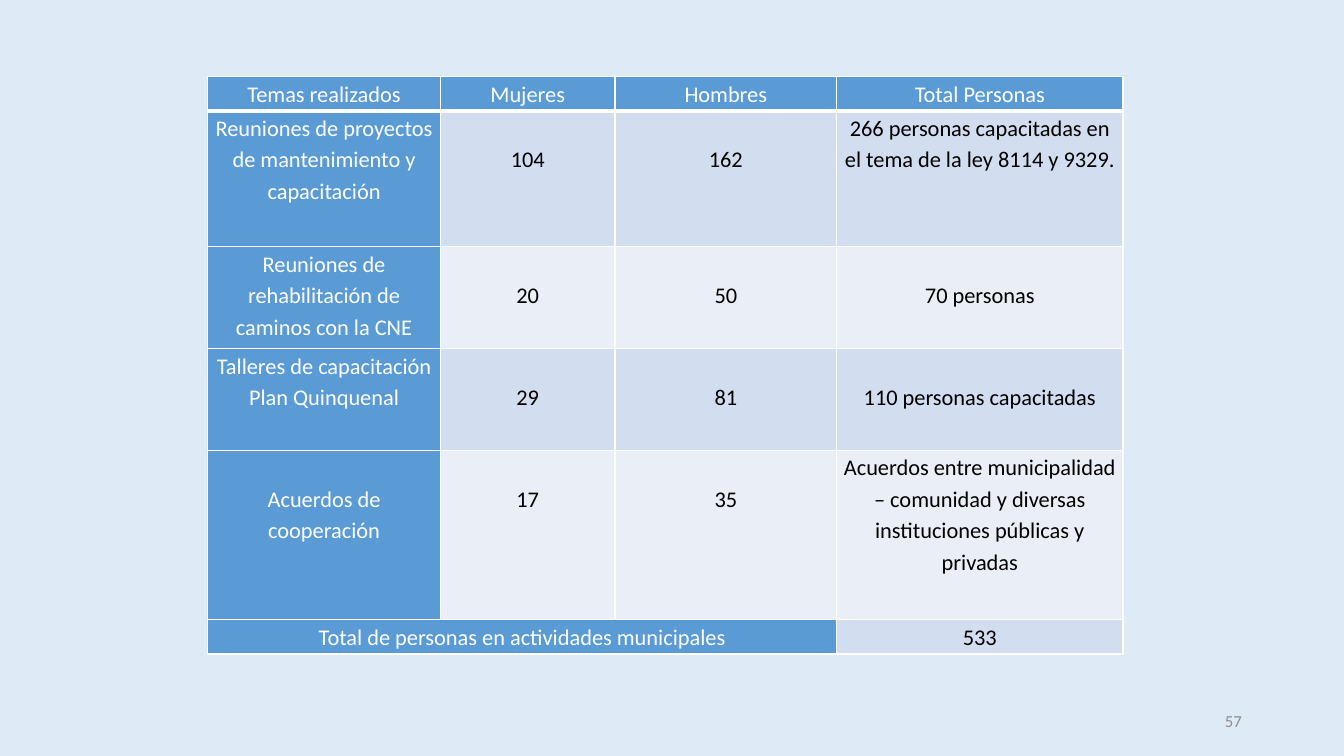
"""Build the slide that tabulates the people reached by municipal activities."""
from dataclasses import dataclass

from lxml import etree
from pptx import Presentation
from pptx.dml.color import RGBColor
from pptx.enum.text import MSO_ANCHOR, PP_ALIGN
from pptx.oxml.ns import qn
from pptx.util import Inches, Pt

CENTER, RIGHT = PP_ALIGN.CENTER, PP_ALIGN.RIGHT
MIDDLE, TOP = MSO_ANCHOR.MIDDLE, MSO_ANCHOR.TOP
SLIDE_WIDTH, SLIDE_HEIGHT = Inches(13.33), Inches(7.5)


@dataclass(frozen=True)
class Theme:
    font: str = "Calibri"
    background: str = "DEEBF7"
    heading: str = "5B9BD5"
    bands: tuple[str, str] = ("D2DEEF", "EAEFF7")
    light: str = "FFFFFF"
    dark: str = "000000"
    muted: str = "8C8C8C"
    table_size: int = 16
    number_size: int = 12
    line_spacing: float = 1.15
    thin_border: int = 1
    heading_border: int = 3


@dataclass(frozen=True)
class Entry:
    text: str
    lines_down: int = 0


@dataclass(frozen=True)
class Activity:
    height: float
    entries: tuple[Entry, ...]


THEME = Theme()
TABLE_LEFT, TABLE_TOP = 15.45, 10.13
COLUMN_SHARES = (17.33, 12.98, 16.5, 21.3)
NUMBER_AREA = (70.65, 92.67, 22.5, 5.33)
CELL_SIDE = Inches(0.07)
LINE_HEIGHT = Inches(0.31)

ACTIVITIES = (
    Activity(4.53, (Entry("Temas realizados"), Entry("Mujeres"),
                    Entry("Hombres"), Entry("Total Personas"))),
    Activity(18, (Entry("Reuniones de proyectos de mantenimiento y capacitación"),
                  Entry("104", 1), Entry("162", 1),
                  Entry("266 personas capacitadas en el tema de la ley 8114 y 9329."))),
    Activity(13.47, (Entry("Reuniones de rehabilitación de caminos con la CNE"),
                     Entry("20", 1), Entry("50", 1), Entry("70 personas", 1))),
    Activity(13.47, (Entry("Talleres de capacitación Plan Quinquenal"),
                     Entry("29", 1), Entry("81", 1),
                     Entry("110 personas capacitadas", 1))),
    Activity(22.4, (Entry("Acuerdos de cooperación", 1), Entry("17", 1), Entry("35", 1),
                    Entry("Acuerdos entre municipalidad – comunidad y diversas "
                          "instituciones públicas y privadas"))),
    Activity(4.53, (Entry("Total de personas en actividades municipales"),
                    Entry(""), Entry(""), Entry("533"))),
)


def across(share: float) -> int:
    """Turn a percentage of the slide width into a length."""
    return round(SLIDE_WIDTH * share / 100)


def down(share: float) -> int:
    """Turn a percentage of the slide height into a length."""
    return round(SLIDE_HEIGHT * share / 100)


def apply(target, formats: dict) -> None:
    """Set each format value on the target."""
    for attribute, value in formats.items():
        setattr(target, attribute, value)


def write(frame, text: str, size: int, color: str, alignment, spacing: float) -> None:
    """Write one formatted paragraph into a text frame."""
    paragraph = frame.paragraphs[0]
    apply(paragraph, {"alignment": alignment, "line_spacing": spacing})
    if text:
        wording = paragraph.add_run()
        wording.text = text
        apply(wording.font, {"name": THEME.font, "size": Pt(size), "bold": False})
        wording.font.color.rgb = RGBColor.from_string(color)


def add_borders(cell, bottom_width: int) -> None:
    """Draw the four borders of a table cell."""
    properties = cell._tc.get_or_add_tcPr()
    for side in "LRTB":
        width = bottom_width if side == "B" else THEME.thin_border
        border = etree.SubElement(properties, qn(f"a:ln{side}"), w=str(Pt(width)))
        fill = etree.SubElement(border, qn("a:solidFill"))
        etree.SubElement(fill, qn("a:srgbClr"), val=THEME.light)


def draw_entry(cell, entry: Entry, row: int, column: int) -> None:
    """Fill and write one cell of the activity table."""
    is_heading = row == 0 or column < 1 or (row == len(ACTIVITIES) - 1 and column < 3)
    add_borders(cell, THEME.heading_border if row == 0 else THEME.thin_border)
    cell.fill.solid()
    shade = THEME.heading if is_heading else THEME.bands[(row - 1) % 2]
    cell.fill.fore_color.rgb = RGBColor.from_string(shade)
    apply(cell, {"margin_left": CELL_SIDE, "margin_right": CELL_SIDE,
                 "margin_top": entry.lines_down * LINE_HEIGHT, "margin_bottom": 0,
                 "vertical_anchor": TOP})
    write(cell.text_frame, entry.text, THEME.table_size,
          THEME.light if is_heading else THEME.dark, CENTER, THEME.line_spacing)


def draw_activities(slide) -> None:
    """Draw the table of activities and attendance."""
    heights = [activity.height for activity in ACTIVITIES]
    activities = slide.shapes.add_table(
        len(heights), len(COLUMN_SHARES), across(TABLE_LEFT), down(TABLE_TOP),
        across(sum(COLUMN_SHARES)), down(sum(heights))).table
    apply(activities, {"first_row": False, "horz_banding": False})
    for column, share in zip(activities.columns, COLUMN_SHARES):
        column.width = across(share)
    for row, activity in enumerate(ACTIVITIES):
        activities.rows[row].height = down(activity.height)
        for column, entry in enumerate(activity.entries):
            draw_entry(activities.cell(row, column), entry, row, column)
    total = len(ACTIVITIES) - 1
    activities.cell(total, 0).merge(activities.cell(total, 2))


def draw_page_number(slide) -> None:
    """Write the page number at the lower right."""
    left, top, width, height = NUMBER_AREA
    frame = slide.shapes.add_textbox(
        across(left), down(top), across(width), down(height)).text_frame
    apply(frame, {"word_wrap": True, "vertical_anchor": MIDDLE})
    write(frame, "57", THEME.number_size, THEME.muted, RIGHT, 1.0)


def main() -> None:
    """Build and save the presentation."""
    presentation = Presentation()
    apply(presentation, {"slide_width": SLIDE_WIDTH, "slide_height": SLIDE_HEIGHT})
    slide = presentation.slides.add_slide(presentation.slide_layouts[6])
    slide.background.fill.solid()
    slide.background.fill.fore_color.rgb = RGBColor.from_string(THEME.background)
    draw_page_number(slide)
    draw_activities(slide)
    presentation.save("out.pptx")


if __name__ == "__main__":
    main()
